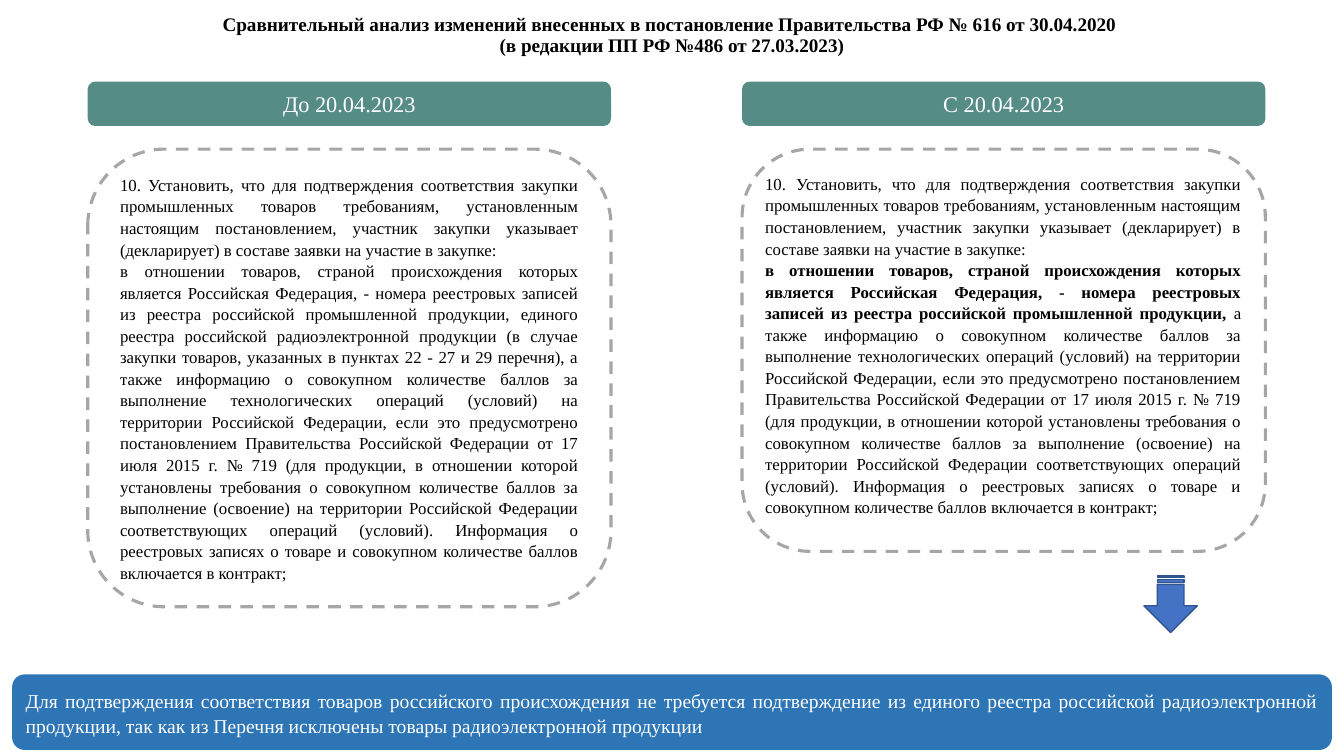
from pptx import Presentation
from pptx import util as u
from pptx.dml.color import RGBColor
from pptx.enum import dml, shapes, text

FONT = "Times New Roman"
COLORS = {
    "black": "000000", "white": "FFFFFF", "dash": "A6A6A6", "header": "568C86",
    "banner": "2E75B6", "arrow": "4472C4", "arrow_edge": "325491",
}

TITLE = [
    [("Сравнительный анализ изменений внесенных в постановление Правительства РФ № 616 от 30.04.2020 ", True)],
    [("(в редакции ПП РФ №486 от 27.03.2023)", True)],
]
INTRO = (
    "10. Установить, что для подтверждения соответствия закупки промышленных товаров "
    "требованиям, установленным настоящим постановлением, участник закупки указывает "
    "(декларирует) в составе заявки на участие в закупке:"
)
ORIGIN = (
    "в отношении товаров, страной происхождения которых является Российская Федерация, - "
    "номера реестровых записей из реестра российской промышленной продукции, "
)
RADIO = (
    "единого реестра российской радиоэлектронной продукции (в случае закупки товаров, "
    "указанных в пунктах 22 - 27 и 29 перечня), "
)
SCORES = (
    "а также информацию о совокупном количестве баллов за выполнение технологических "
    "операций (условий) на территории Российской Федерации, если это предусмотрено "
    "постановлением Правительства Российской Федерации от 17 июля 2015 г. № 719 (для "
    "продукции, в отношении которой установлены требования о совокупном количестве баллов "
    "за выполнение (освоение) на территории Российской Федерации соответствующих операций "
    "(условий). Информация о реестровых записях о товаре и совокупном количестве баллов "
    "включается в контракт;"
)
BEFORE = [[(INTRO, False)], [(ORIGIN + RADIO + SCORES, False)]]
AFTER = [[(INTRO, False)], [(ORIGIN, True), (SCORES, False)]]
HEADERS = ["До 20.04.2023", "С 20.04.2023"]
CONCLUSION = (
    "Для подтверждения соответствия товаров российского происхождения не требуется "
    "подтверждение из единого реестра российской радиоэлектронной продукции, так как из "
    "Перечня исключены товары радиоэлектронной продукции"
)

WIDTH, HEIGHT = 13.33, 7.5
COLUMN_WIDTH, COLUMN_STEP, COLUMN_START = 5.19, 6.49, 0.87
COLUMNS = [COLUMN_START + COLUMN_STEP * i for i in range(2)]
HEADER_TOP, HEADER_HEIGHT = 0.81, 0.44
PANEL_TOP, PANEL_HEIGHTS = 1.48, [4.54, 3.99]
PANEL_ROUNDING = [0.167, 0.169]

deck = Presentation()
deck.slide_width, deck.slide_height = u.Inches(WIDTH), u.Inches(HEIGHT)
page = deck.slides.add_slide(deck.slide_layouts[6])


def color(name):
    return RGBColor.from_string(COLORS[name])


def add_box(kind, left, top, width, height, fill=None, line=None, line_width=1):
    box = page.shapes.add_shape(kind, *map(u.Inches, (left, top, width, height)))
    box.shadow.inherit = False
    if fill:
        box.fill.solid()
        box.fill.fore_color.rgb = color(fill)
    else:
        box.fill.background()
    if line:
        box.line.color.rgb = color(line)
        box.line.width = u.Pt(line_width)
    else:
        box.line.fill.background()
    return box


def add_text_box(left, top, width, height):
    return page.shapes.add_textbox(*map(u.Inches, (left, top, width, height)))


def write(box, paragraphs, size, ink="black", align=text.PP_ALIGN.JUSTIFY,
          spacing=1.07, anchor=text.MSO_ANCHOR.MIDDLE):
    frame = box.text_frame
    frame.word_wrap = True
    frame.vertical_anchor = anchor
    for i, spans in enumerate(paragraphs):
        para = frame.add_paragraph() if i else frame.paragraphs[0]
        para.alignment = align
        para.line_spacing = spacing
        for words, bold in spans:
            span = para.add_run()
            span.text = words
            span.font.name = FONT
            span.font.size = u.Pt(size)
            span.font.bold = bold
            span.font.color.rgb = color(ink)


rounded = shapes.MSO_SHAPE.ROUNDED_RECTANGLE
panels = []
for left, height, rounding in zip(COLUMNS, PANEL_HEIGHTS, PANEL_ROUNDING):
    panel = add_box(rounded, left, PANEL_TOP, COLUMN_WIDTH, height, line="dash", line_width=2.25)
    panel.adjustments[0] = rounding
    panel.line.dash_style = dml.MSO_LINE.DASH
    panels.append(panel)
write(panels[0], BEFORE, 12)

for left, label in zip(COLUMNS, HEADERS):
    header = add_box(rounded, left, HEADER_TOP, COLUMN_WIDTH, HEADER_HEIGHT, fill="header")
    write(header, [[(label, False)]], 16, "white", text.PP_ALIGN.CENTER, 1.0)

banner = add_box(rounded, 0.12, 6.69, 13.09, 0.75, fill="banner")
write(banner, [[(CONCLUSION, False)]], 14, "white")

arrow = add_box(shapes.MSO_SHAPE.STRIPED_RIGHT_ARROW, 11.33, 5.73, 0.56, 0.53,
                fill="arrow", line="arrow_edge")
arrow.rotation = 90

title = add_text_box(0.33, 0, 12.67, 0.61)
write(title, TITLE, 13.7, align=text.PP_ALIGN.CENTER, spacing=0.9, anchor=text.MSO_ANCHOR.BOTTOM)

after_text = add_text_box(COLUMNS[1] + 0.13, 1.66, 4.92, 3.71)
write(after_text, AFTER, 12, anchor=text.MSO_ANCHOR.TOP)
after_text.text_frame.auto_size = text.MSO_AUTO_SIZE.SHAPE_TO_FIT_TEXT

deck.save("out.pptx")
